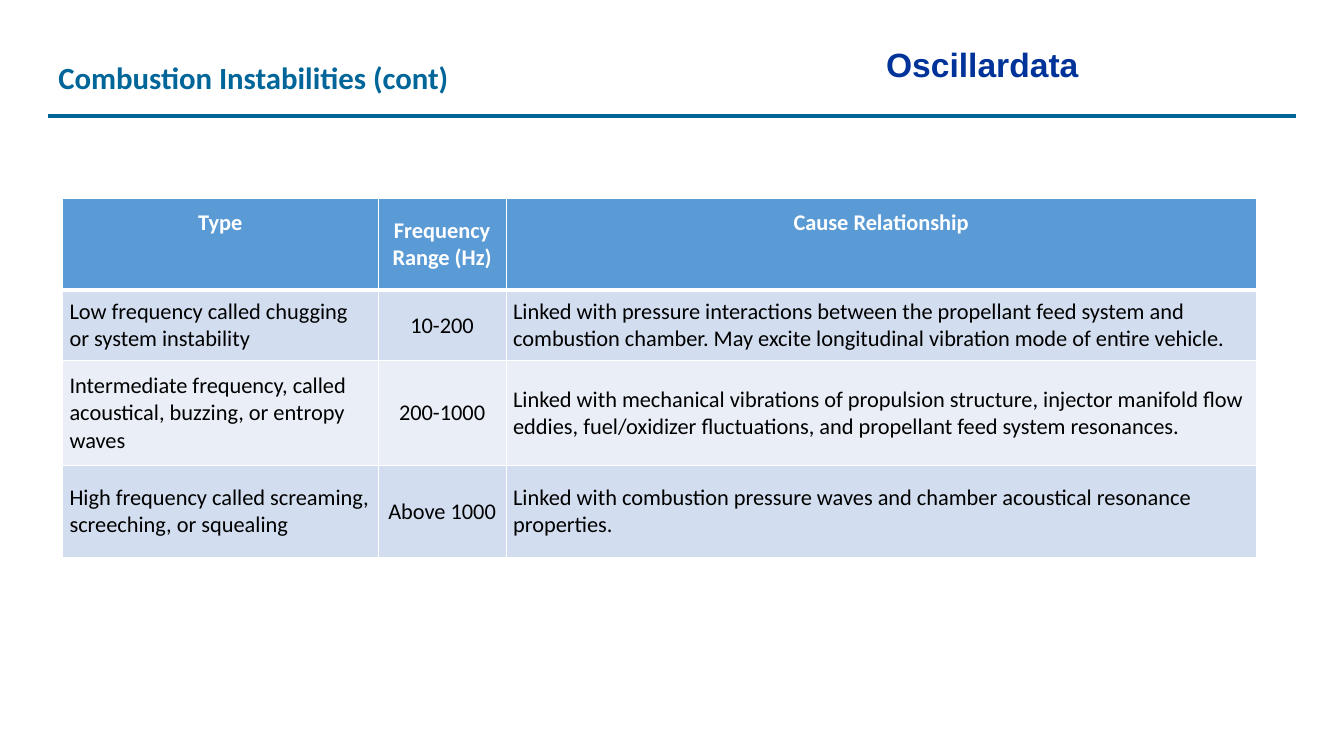
from lxml import etree
from pptx import Presentation
from pptx.dml.color import RGBColor
from pptx.enum.shapes import MSO_CONNECTOR
from pptx.enum.text import MSO_ANCHOR, PP_ALIGN
from pptx.oxml.ns import qn
from pptx.util import Inches, Pt

LEFT, CENTER = PP_ALIGN.LEFT, PP_ALIGN.CENTER
TOP, MIDDLE = MSO_ANCHOR.TOP, MSO_ANCHOR.MIDDLE
STRAIGHT = MSO_CONNECTOR.STRAIGHT

COL_WIDTHS = [3.13, 1.27, 7.44]
ROW_HEIGHTS = [0.91, 0.7, 1.04, 0.91]
ROWS = [
    ["Type", "Frequency Range (Hz)", "Cause Relationship"],
    ["Low frequency called chugging or system instability", "10-200",
     "Linked with pressure interactions between the propellant feed system and "
     "combustion chamber. May excite longitudinal vibration mode of entire vehicle."],
    ["Intermediate frequency, called acoustical, buzzing, or entropy waves", "200-1000",
     "Linked with mechanical vibrations of propulsion structure, injector manifold flow "
     "eddies, fuel/oxidizer fluctuations, and propellant feed system resonances."],
    ["High frequency called screaming, screeching, or squealing", "Above 1000",
     "Linked with combustion pressure waves and chamber acoustical resonance properties."],
]


def rgb(color):
    return RGBColor.from_string(color)


class Deck:
    font = "Calibri"
    accent = "006699"
    header_fill = "5B9BD5"
    bands = ["D2DEEF", "EAEFF7"]
    border = "FFFFFF"

    def __init__(self):
        self.prs = Presentation()
        self.prs.slide_width, self.prs.slide_height = Inches(13.33), Inches(7.5)
        self.s = self.prs.slides.add_slide(self.prs.slide_layouts[6])

    def style(self, p, size, color, bold, font=None):
        f = p.font
        f.name, f.size, f.bold = font or self.font, Pt(size), bold
        f.color.rgb = rgb(color)

    def text(self, x, y, w, h, text, size, color, font=None):
        tf = self.s.shapes.add_textbox(Inches(x), Inches(y), Inches(w), Inches(h)).text_frame
        tf.word_wrap = True
        p = tf.paragraphs[0]
        p.text = text
        self.style(p, size, color, True, font)

    def line(self, x1, y1, x2, y2, width):
        ln = self.s.shapes.add_connector(STRAIGHT, Inches(x1), Inches(y1), Inches(x2), Inches(y2))
        ln.line.color.rgb, ln.line.width = rgb(self.accent), Pt(width)
        etree.SubElement(ln._element.spPr, qn("a:effectLst"))

    def borders(self, cell, top, bottom):
        tcPr = cell._tc.get_or_add_tcPr()
        for side, width in zip("LRTB", (1, 1, top, bottom)):
            ln = etree.SubElement(tcPr, qn(f"a:ln{side}"), w=str(Pt(width)))
            fill = etree.SubElement(ln, qn("a:solidFill"))
            etree.SubElement(fill, qn("a:srgbClr"), val=self.border)

    def cell(self, cell, text, row, col):
        header = row == 0
        raised = header and col != 1
        self.borders(cell, 3 if row == 1 else 1, 3 if header else 1)
        cell.fill.solid()
        cell.fill.fore_color.rgb = rgb(self.header_fill if header else self.bands[(row - 1) % 2])
        cell.margin_left = cell.margin_right = Inches(0.07)
        cell.margin_top = Inches(0.1 if raised else 0)
        cell.margin_bottom = 0
        cell.vertical_anchor = TOP if raised else MIDDLE
        p = cell.text_frame.paragraphs[0]
        p.text = text
        p.alignment = CENTER if header or col == 1 else LEFT
        p.space_before = p.space_after = Pt(6)
        self.style(p, 16, "FFFFFF" if header else "000000", header)

    def table(self, x, y, widths, heights, rows):
        tbl = self.s.shapes.add_table(len(rows), len(widths), Inches(x), Inches(y),
                                      Inches(sum(widths)), Inches(sum(heights))).table
        for column, w in zip(tbl.columns, widths):
            column.width = Inches(w)
        for r, (row, h) in enumerate(zip(rows, heights)):
            tbl.rows[r].height = Inches(h)
            for c, text in enumerate(row):
                self.cell(tbl.cell(r, c), text, r, c)


def main():
    deck = Deck()
    deck.text(8.69, 0.39, 2.33, 0.5, "Oscillardata", 24, "003399", font="Arial")
    deck.line(0.48, 1.15, 12.85, 1.15, 2.5)
    deck.text(0.48, 0.53, 7.05, 0.47, "Combustion Instabilities (cont)", 22, deck.accent)
    deck.table(0.62, 1.97, COL_WIDTHS, ROW_HEIGHTS, ROWS)
    deck.prs.save("out.pptx")


if __name__ == "__main__":
    main()
